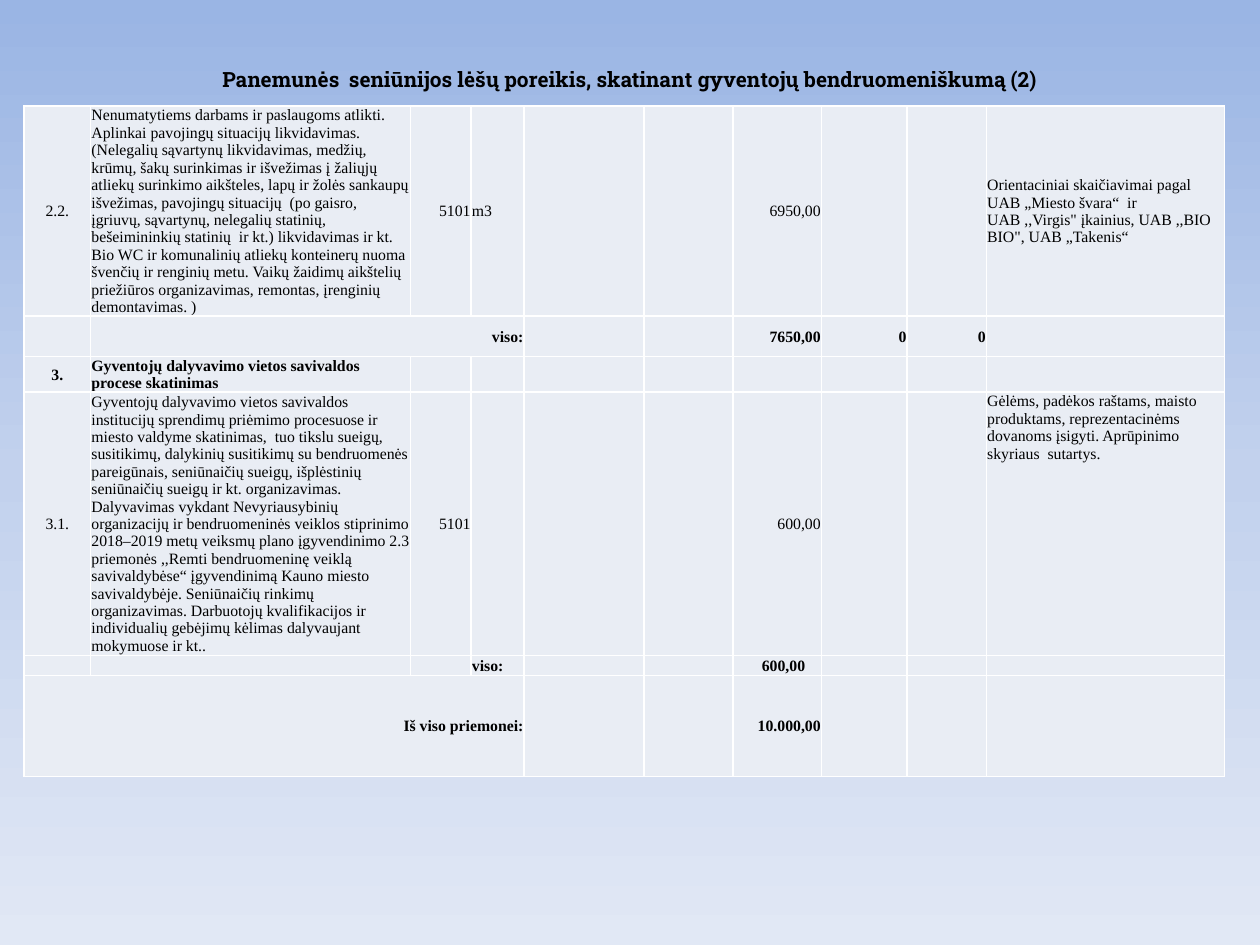
import pptx
import pptx.util
import pptx.dml.color
import pptx.enum.text
import pptx.oxml.ns
from lxml import etree

Inches, Pt = pptx.util.Inches, pptx.util.Pt
RGBColor = pptx.dml.color.RGBColor
Align = pptx.enum.text.PP_ALIGN
Anchor = pptx.enum.text.MSO_ANCHOR
qn = pptx.oxml.ns.qn

BLACK = RGBColor(0x00, 0x00, 0x00)
WHITE = RGBColor(0xFF, 0xFF, 0xFF)
CELL_FILL = RGBColor(0xE9, 0xED, 0xF4)
SKY = [(0, RGBColor(0x9A, 0xB5, 0xE4)), (50, RGBColor(0xC2, 0xD1, 0xED)),
       (100, RGBColor(0xE1, 0xE8, 0xF5))]
TITLE_FONT, BODY_FONT = "Roboto Slab", "Times New Roman"
BODY_SIZE, LINE_HEIGHT = 9, 9.95

TITLE = [("Panemunės", 12), (" ", 22),
         ("seniūnijos lėšų poreikis, skatinant gyventojų bendruomeniškumą (2)", 12)]

WASTE_WORK = (
    "Nenumatytiems darbams ir paslaugoms atlikti. Aplinkai pavojingų situacijų likvidavimas. "
    "(Nelegalių sąvartynų likvidavimas, medžių, krūmų, šakų surinkimas ir išvežimas į žaliųjų "
    "atliekų surinkimo aikšteles, lapų ir žolės sankaupų išvežimas, pavojingų situacijų  (po "
    "gaisro, įgriuvų, sąvartynų, nelegalių statinių, bešeimininkių statinių  ir kt.) likvidavimas "
    "ir kt. Bio WC ir komunalinių atliekų konteinerų nuoma švenčių ir renginių metu. Vaikų žaidimų "
    "aikštelių priežiūros organizavimas, remontas, įrenginių demontavimas. )")
WASTE_NOTE = ("Orientaciniai skaičiavimai pagal  UAB „Miesto švara“  ir "
              "UAB ,,Virgis\" įkainius, UAB ,,BIO BIO\", UAB „Takenis“")
CIVIC_WORK = (
    "Gyventojų dalyvavimo vietos savivaldos  institucijų sprendimų priėmimo procesuose ir miesto "
    "valdyme skatinimas,  tuo tikslu sueigų, susitikimų, dalykinių susitikimų su bendruomenės "
    "pareigūnais, seniūnaičių sueigų, išplėstinių seniūnaičių sueigų ir kt. organizavimas. "
    "Dalyvavimas vykdant Nevyriausybinių organizacijų ir bendruomeninės veiklos stiprinimo "
    "2018–2019 metų veiksmų plano įgyvendinimo 2.3 priemonės ,,Remti bendruomeninę veiklą "
    "savivaldybėse“ įgyvendinimą Kauno miesto savivaldybėje. Seniūnaičių rinkimų organizavimas. "
    "Darbuotojų kvalifikacijos ir individualių gebėjimų kėlimas dalyvaujant mokymuose ir kt..")
CIVIC_NOTE = ("Gėlėms, padėkos raštams, maisto produktams, reprezentacinėms dovanoms įsigyti. "
              "Aprūpinimo skyriaus  sutartys.")

COLUMN_WIDTHS = [0.53, 2.54, 0.48, 0.42, 0.95, 0.71, 0.7, 0.68, 0.63, 1.89]
COLUMN_ALIGN = [Align.CENTER, Align.LEFT, Align.RIGHT, Align.LEFT, Align.LEFT, Align.LEFT,
                Align.RIGHT, Align.RIGHT, Align.RIGHT, Align.LEFT]

# (height, bold, merged column range, {column: text})
ROWS = [
    (1.67, False, None, {0: "2.2.", 1: WASTE_WORK, 2: "5101", 3: "m3", 6: "6950,00", 9: WASTE_NOTE}),
    (0.32, True, (1, 3), {1: "viso:", 6: "7650,00", 7: "0", 8: "0"}),
    (0.28, True, None, {0: "3.", 1: "Gyventojų dalyvavimo vietos savivaldos procese skatinimas"}),
    (2.09, False, None, {0: "3.1.", 1: CIVIC_WORK, 2: "5101", 6: "600,00", 9: CIVIC_NOTE}),
    (0.16, True, None, {3: "viso:", 6: "600,00"}),
    (0.8, True, (0, 3), {0: "Iš viso priemonei:", 6: "10.000,00"}),
]
TOP_ANCHORED = (3, 9)
INDENTED_SUM = (4, 6)


def style_font(font, name, size, bold):
    font.name, font.size, font.bold = name, Pt(size), bold
    font.color.rgb = BLACK


def paint_background(page):
    fill = page.background.fill
    fill.gradient()
    stops = fill._fill._gradFill.find(qn("a:gsLst"))
    for stop in list(stops):
        stops.remove(stop)
    for percent, color in SKY:
        stop = etree.SubElement(stops, qn("a:gs"), pos=str(percent * 1000))
        etree.SubElement(stop, qn("a:srgbClr"), val=str(color))
    fill.gradient_angle = 270


def add_borders(cell):
    properties = cell._tc.get_or_add_tcPr()
    for side in ("lnL", "lnR", "lnT", "lnB"):
        line = etree.SubElement(properties, qn("a:" + side), w=str(Pt(1)))
        solid = etree.SubElement(line, qn("a:solidFill"))
        etree.SubElement(solid, qn("a:srgbClr"), val=str(WHITE))


def fill_cell(cell, text, align, bold):
    add_borders(cell)
    cell.fill.solid()
    cell.fill.fore_color.rgb = CELL_FILL
    cell.margin_left = cell.margin_right = cell.margin_top = Pt(0.45)
    cell.margin_bottom = 0
    cell.vertical_anchor = Anchor.MIDDLE
    cell.text_frame.text = text
    para = cell.text_frame.paragraphs[0]
    para.alignment = align
    para.line_spacing = Pt(LINE_HEIGHT)
    for span in para.runs:
        style_font(span.font, BODY_FONT, BODY_SIZE, bold)
    if not text:  # keeps empty cells from stretching low rows
        etree.SubElement(para._p, qn("a:endParaRPr"), sz=str(BODY_SIZE * 100))


def add_title(page):
    box = page.shapes.add_textbox(Inches(0.5), Inches(0.3), Inches(9), Inches(0.54))
    frame = box.text_frame
    frame.word_wrap = True
    frame.vertical_anchor = Anchor.MIDDLE
    para = frame.paragraphs[0]
    para.alignment = Align.CENTER
    for text, size in TITLE:
        span = para.add_run()
        span.text = text
        style_font(span.font, TITLE_FONT, size, True)


def add_budget_table(page):
    height = sum(row[0] for row in ROWS)
    table = page.shapes.add_table(len(ROWS), len(COLUMN_WIDTHS), Inches(0.19), Inches(0.84),
                                  Inches(sum(COLUMN_WIDTHS)), Inches(height)).table
    table.first_row = table.horz_banding = False
    for column, width in zip(table.columns, COLUMN_WIDTHS):
        column.width = Inches(width)
    for r, (height, bold, merged, texts) in enumerate(ROWS):
        table.rows[r].height = Inches(height)
        for c, align in enumerate(COLUMN_ALIGN):
            if merged and c == merged[0]:
                align = Align.RIGHT
            fill_cell(table.cell(r, c), texts.get(c, ""), align, bold)
        if merged:
            table.cell(r, merged[0]).merge(table.cell(r, merged[1]))
    table.cell(*TOP_ANCHORED).vertical_anchor = Anchor.TOP
    table.cell(*INDENTED_SUM).margin_right = Inches(0.13)


def main():
    deck = pptx.Presentation()
    deck.slide_width, deck.slide_height = Inches(10), Inches(7.5)
    page = deck.slides.add_slide(deck.slide_layouts[6])
    paint_background(page)
    add_title(page)
    add_budget_table(page)
    deck.save("out.pptx")


if __name__ == "__main__":
    main()
